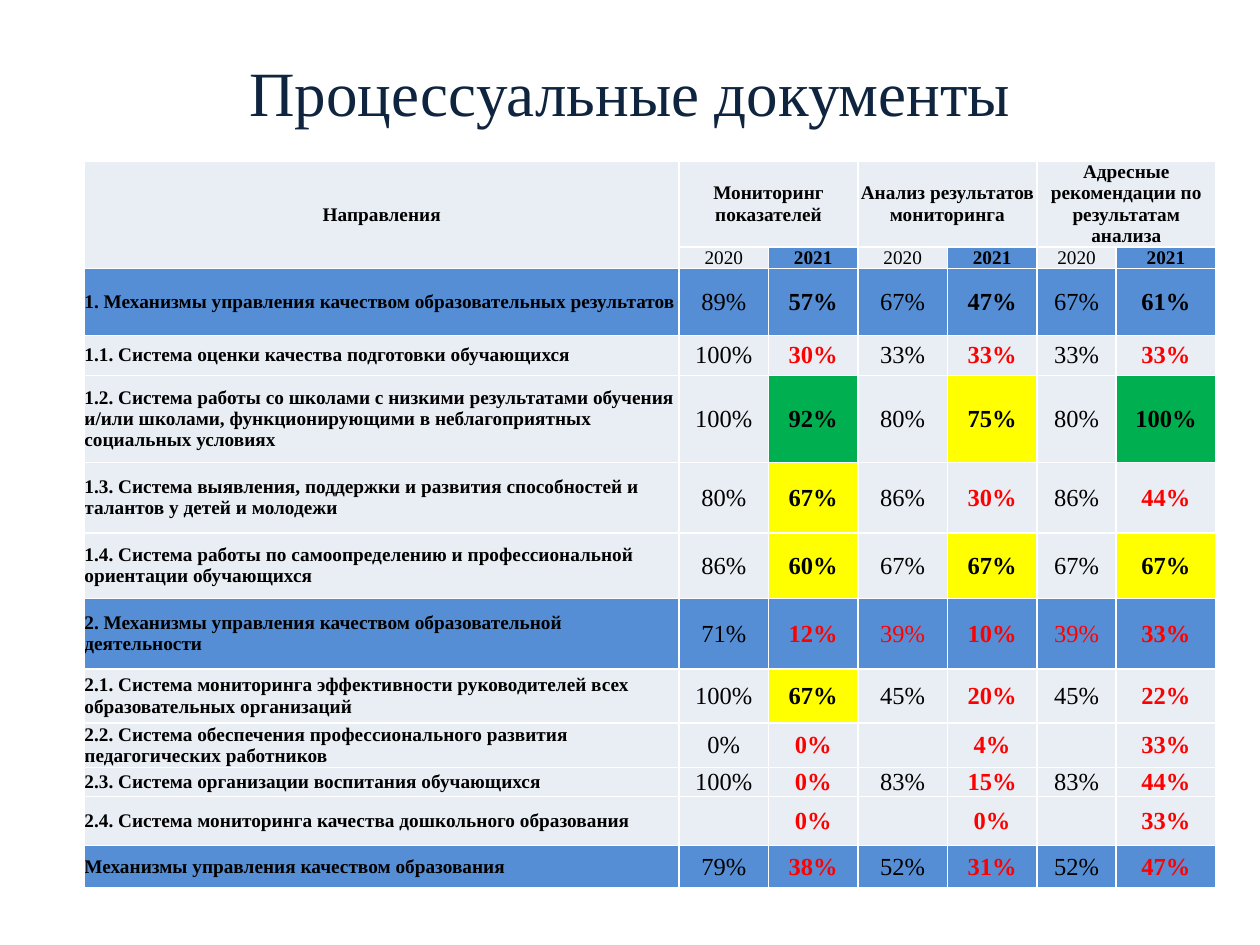
from dataclasses import dataclass

from lxml import etree
from pptx import Presentation
from pptx.dml.color import RGBColor
from pptx.enum.text import MSO_ANCHOR, PP_ALIGN
from pptx.oxml.ns import qn
from pptx.util import Inches, Pt

LEFT, CENTER = PP_ALIGN.LEFT, PP_ALIGN.CENTER
MIDDLE = MSO_ANCHOR.MIDDLE
FONT = "Times New Roman"
COLORS = {
    "title": "0F243E",
    "text": "000000",
    "low": "FF0000",
    "medium": "FFFF00",
    "high": "00B050",
    "plain": "E9EDF4",
    "accent": "558ED5",
    "border": "FFFFFF",
}
MARK_FILLS = {"y": "medium", "g": "high"}
COLUMN_WIDTHS = [4.72, 0.71, 0.71, 0.71, 0.71, 0.63, 0.79]
HEADER_HEIGHTS = [0.68, 0.17]
STAGES = [
    "Мониторинг показателей",
    "Анализ результатов мониторинга",
    "Адресные рекомендации по результатам анализа",
]


@dataclass
class Direction:
    name: str
    height: float
    shares: list
    marks: str
    summary: bool = False


# marks, one per share: r = red text, y = yellow fill, g = green fill
DIRECTIONS = [
    Direction("1. Механизмы управления качеством образовательных результатов",
              0.53, [89, 57, 67, 47, 67, 61], "......", True),
    Direction("1.1. Система оценки качества подготовки обучающихся",
              0.32, [100, 30, 33, 33, 33, 33], ".r.r.r"),
    Direction("1.2. Система работы со школами с низкими результатами обучения "
              "и/или школами, функционирующими в неблагоприятных социальных условиях",
              0.69, [100, 92, 80, 75, 80, 100], ".g.y.g"),
    Direction("1.3. Система выявления, поддержки и развития способностей и "
              "талантов у детей и молодежи",
              0.56, [80, 67, 86, 30, 86, 44], ".y.r.r"),
    Direction("1.4. Система работы по самоопределению и профессиональной "
              "ориентации обучающихся",
              0.52, [86, 60, 67, 67, 67, 67], ".y.y.y"),
    Direction("2. Механизмы управления качеством образовательной деятельности",
              0.56, [71, 12, 39, 10, 39, 33], ".rrrrr", True),
    Direction("2.1. Система мониторинга эффективности руководителей всех "
              "образовательных организаций",
              0.43, [100, 67, 45, 20, 45, 22], ".y.r.r"),
    Direction("2.2. Система обеспечения профессионального развития "
              "педагогических работников",
              0.35, [0, 0, None, 4, None, 33], ".r.r.r"),
    Direction("2.3. Система организации воспитания обучающихся",
              0.23, [100, 0, 83, 15, 83, 44], ".r.r.r"),
    Direction("2.4. Система мониторинга качества дошкольного образования",
              0.39, [None, 0, None, 0, None, 33], ".r.r.r"),
    Direction("Механизмы управления качеством образования",
              0.34, [79, 38, 52, 31, 52, 47], ".r.r.r", True),
]


def style_text(paragraph, size: float, color: str, bold: bool, align=CENTER) -> None:
    paragraph.alignment = align
    for font in [paragraph.font] + [run.font for run in paragraph.runs]:
        font.name = FONT
        font.size = Pt(size)
        font.bold = bold
        font.color.rgb = RGBColor.from_string(COLORS[color])


def add_borders(cell) -> None:
    properties = cell._tc.get_or_add_tcPr()
    for side in ("lnL", "lnR", "lnT", "lnB"):
        line = etree.SubElement(properties, qn(f"a:{side}"), w=str(Pt(1)))
        fill = etree.SubElement(line, qn("a:solidFill"))
        etree.SubElement(fill, qn("a:srgbClr"), val=COLORS["border"])


def fill_cell(cell, text: str, fill: str, size: float = 11, color: str = "text",
              bold: bool = True, align=CENTER) -> None:
    cell.margin_left = cell.margin_right = cell.margin_top = cell.margin_bottom = 0
    cell.vertical_anchor = MIDDLE
    add_borders(cell)
    cell.fill.solid()
    cell.fill.fore_color.rgb = RGBColor.from_string(COLORS[fill])
    cell.text_frame.text = text
    style_text(cell.text_frame.paragraphs[0], size, color, bold, align)


def draw_header(table) -> None:
    fill_cell(table.cell(0, 0), "Направления", "plain")
    fill_cell(table.cell(1, 0), "", "plain")
    table.cell(0, 0).merge(table.cell(1, 0))
    for index, stage in enumerate(STAGES):
        column = 1 + 2 * index
        fill_cell(table.cell(0, column), stage, "plain")
        fill_cell(table.cell(0, column + 1), "", "plain")
        table.cell(0, column).merge(table.cell(0, column + 1))
        fill_cell(table.cell(1, column), "2020", "plain", bold=False)
        fill_cell(table.cell(1, column + 1), "2021", "accent")


def draw_direction(table, row: int, direction: Direction) -> None:
    base = "accent" if direction.summary else "plain"
    fill_cell(table.cell(row, 0), direction.name, base, align=LEFT)
    for column, (share, mark) in enumerate(zip(direction.shares, direction.marks), 1):
        fill_cell(
            table.cell(row, column),
            "" if share is None else f"{share}%",
            MARK_FILLS.get(mark, base),
            size=14,
            color="low" if mark == "r" else "text",
            bold=column % 2 == 0,
        )


def main() -> None:
    prs = Presentation()
    prs.slide_width, prs.slide_height = Inches(10), Inches(7.5)
    slide = prs.slides.add_slide(prs.slide_layouts[5])

    title = slide.shapes.title
    title.left, title.top = Inches(0.5), Inches(0.3)
    title.width, title.height = Inches(9), Inches(0.85)
    title.text_frame.text = "Процессуальные документы"
    title.text_frame.vertical_anchor = MIDDLE
    style_text(title.text_frame.paragraphs[0], 36, "title", False)

    heights = HEADER_HEIGHTS + [direction.height for direction in DIRECTIONS]
    table = slide.shapes.add_table(
        len(heights), len(COLUMN_WIDTHS), Inches(0.67), Inches(1.28),
        Inches(sum(COLUMN_WIDTHS)), Inches(sum(heights)),
    ).table
    for column, width in zip(table.columns, COLUMN_WIDTHS):
        column.width = Inches(width)
    for row, height in zip(table.rows, heights):
        row.height = Inches(height)

    draw_header(table)
    for row, direction in enumerate(DIRECTIONS, len(HEADER_HEIGHTS)):
        draw_direction(table, row, direction)

    prs.save("out.pptx")


if __name__ == "__main__":
    main()
